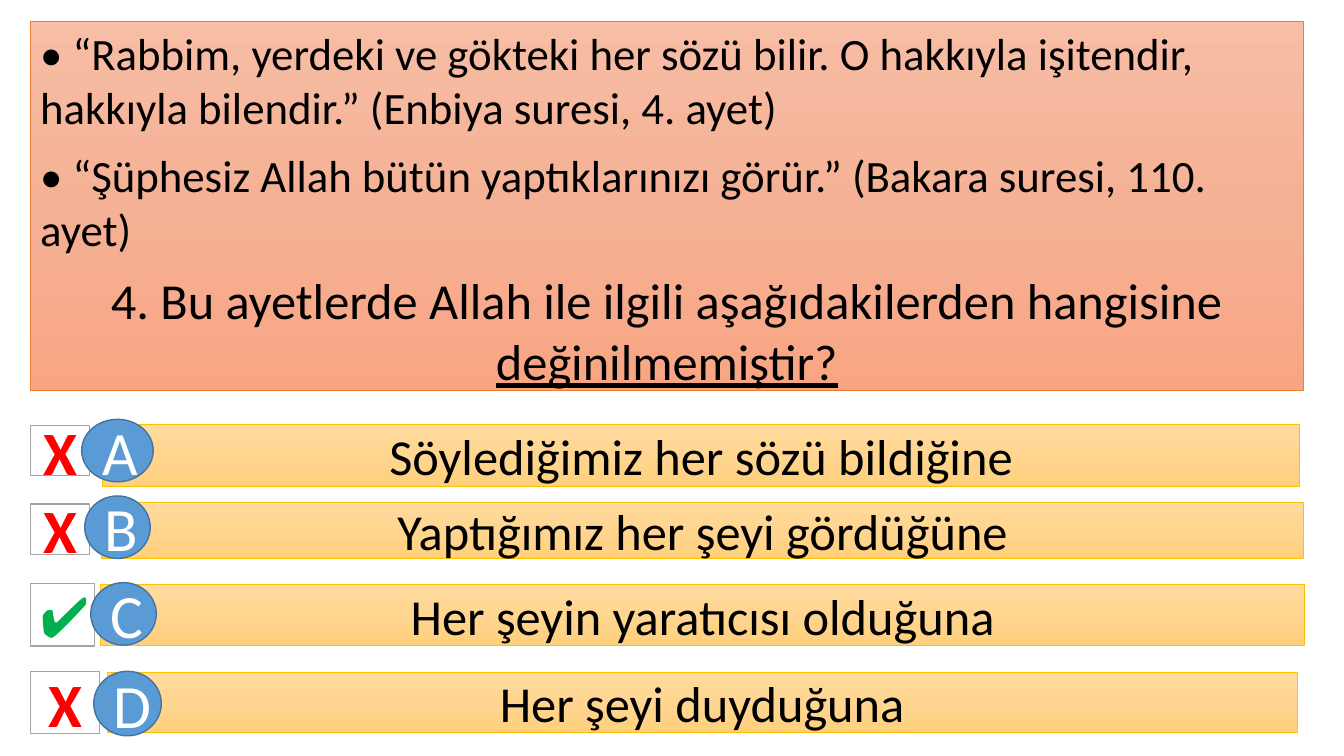
"""Build a Turkish multiple-choice quiz slide with four marked answers."""
from copy import deepcopy

from pptx import Presentation
from pptx import util as u
from pptx.dml.color import RGBColor
from pptx.enum import shapes, text

BLACK = RGBColor(0, 0, 0)
WHITE = RGBColor(255, 255, 255)
RED = RGBColor(255, 0, 0)
GREEN = RGBColor(0x00, 0xB0, 0x50)
GREY = RGBColor(0xA5, 0xA5, 0xA5)
BLUE = RGBColor(0x5B, 0x9B, 0xD5)
NAVY = RGBColor(0x43, 0x73, 0x9E)
GOLD = RGBColor(0xFF, 0xC0, 0x00)
RUST = RGBColor(0xED, 0x7D, 0x31)
SAND = [RGBColor.from_string(c) for c in ("FFDB9E", "FFD590", "FFD07C")]
PEACH = [RGBColor.from_string(c) for c in ("F7BDA5", "F5B196", "F8A582")]

VERSES = [
    "• “Rabbim, yerdeki ve gökteki her sözü bilir. O hakkıyla işitendir, "
    "hakkıyla bilendir.” (Enbiya suresi, 4. ayet)",
    "• “Şüphesiz Allah bütün yaptıklarınızı görür.” (Bakara suresi, 110. ayet)",
]
ASK = "4. Bu ayetlerde Allah ile ilgili aşağıdakilerden hangisine "
KEY = "değinilmemiştir?"

PANEL = (30, 21, 1263, 366)
ROWS = [
    ("A", "Söylediğimiz her sözü bildiğine", False,
     (30, 422, 59, 50), (102, 421, 1187, 62), (81, 416, 71, 62)),
    ("B", "Yaptığımız her şeyi gördüğüne", False,
     (30, 500, 59, 50), (101, 498, 1192, 56), (84, 492, 65, 62)),
    ("C", "Her şeyin yaratıcısı olduğuna", True,
     (30, 579, 64, 62), (100, 580, 1194, 60), (90, 578, 65, 62)),
    ("D", "Her şeyi duyduğuna", False,
     (30, 666, 69, 62), (106, 667, 1181, 60), (93, 666, 67, 64)),
]

PX = 9144
RECT = shapes.MSO_SHAPE.RECTANGLE
OVAL = shapes.MSO_SHAPE.OVAL
MID = text.PP_ALIGN.CENTER
LEFT = text.PP_ALIGN.LEFT

deck = Presentation()
deck.slide_width, deck.slide_height = 1333 * PX, 750 * PX
slide = deck.slides.add_slide(deck.slide_layouts[6])


def blend(shape, hues):
    """Fill a shape from top to bottom with three evenly spaced hues."""
    shape.fill.gradient()
    shape.fill.gradient_angle = 270
    first = shape.element.spPr.xpath(".//a:gs")[0]
    first.addnext(deepcopy(first))
    for i, (stop, hue) in enumerate(zip(shape.fill.gradient_stops, hues)):
        stop.position = i / 2
        stop.color.rgb = hue


def draw(kind, box, fill, edge, width=1, anchor=text.MSO_ANCHOR.MIDDLE):
    """Add a shape and return its text frame."""
    shape = slide.shapes.add_shape(kind, *(n * PX for n in box))
    shape.shadow.inherit = False
    if isinstance(fill, list):
        blend(shape, fill)
    else:
        shape.fill.solid()
        shape.fill.fore_color.rgb = fill
    shape.line.color.rgb = edge
    shape.line.width = u.Pt(width)
    frame = shape.text_frame
    frame.word_wrap = True
    frame.vertical_anchor = anchor
    return frame


def write(para, words, size=36, color=BLACK, align=MID, bold=False,
          under=False, before=0):
    """Add one formatted run to a paragraph."""
    para.alignment = align
    para.space_before = u.Pt(before)
    run = para.add_run()
    run.text = words
    font = run.font
    font.name, font.size = "Calibri", u.Pt(size)
    font.bold, font.underline = bold, under
    font.color.rgb = color


def main():
    """Draw the question panel and the answer rows, then save."""
    frame = draw(RECT, PANEL, PEACH, RUST, 0.5, text.MSO_ANCHOR.TOP)
    para = frame.paragraphs[0]
    for verse in VERSES:
        write(para, verse, size=32, align=LEFT, before=10)
        para = frame.add_paragraph()
    write(para, ASK, before=10)
    write(para, KEY, under=True, before=10)

    for letter, answer, right, mark, bar, disc in ROWS:
        para = draw(RECT, mark, WHITE, GREY).paragraphs[0]
        if right:
            write(para, "✔", size=40, color=GREEN)
        else:
            write(para, "X", size=44, color=RED, bold=True)
        write(draw(RECT, bar, SAND, GOLD, 0.5).paragraphs[0], answer)
        write(draw(OVAL, disc, BLUE, NAVY).paragraphs[0], letter,
              size=44, color=WHITE)

    deck.save("out.pptx")


if __name__ == "__main__":
    main()
